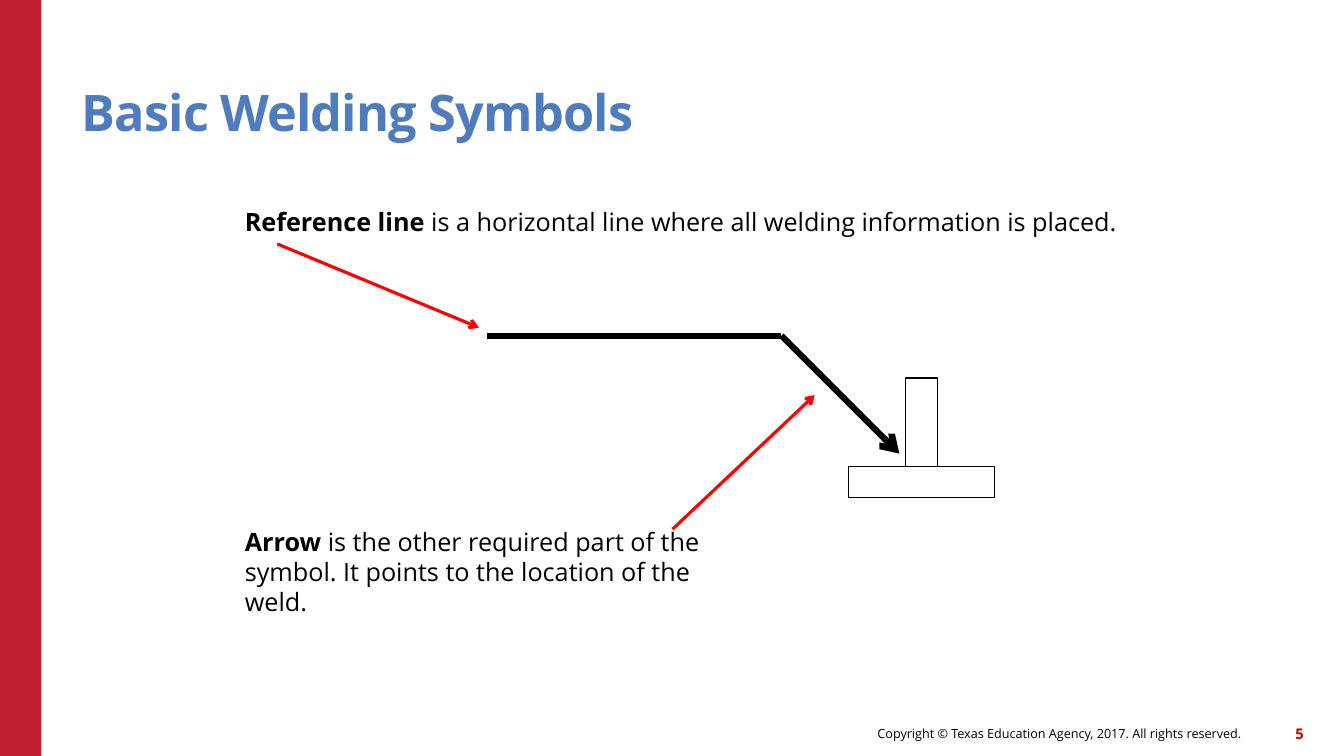
from dataclasses import dataclass

from lxml.etree import SubElement
from pptx import Presentation
from pptx.dml.color import RGBColor
from pptx.enum.shapes import MSO_CONNECTOR, MSO_SHAPE
from pptx.enum.text import MSO_ANCHOR, PP_ALIGN
from pptx.oxml.ns import qn
from pptx.util import Inches, Pt


@dataclass(frozen=True)
class Theme:
    font: str = "Open Sans"
    band: str = "C02033"
    title: str = "4E7CBE"
    ink: str = "000000"
    number: str = "C00000"
    pointer: str = "FF0000"
    title_size: float = 36
    body_size: float = 18
    number_size: float = 10.5
    copyright_size: float = 9
    symbol_line: float = 4.5
    pointer_line: float = 2.25
    plate_line: float = 0.75


THEME = Theme()


def add_span(para, text, size, color, bold=False):
    span = para.add_run()
    span.text = text
    span.font.name = THEME.font
    span.font.size = Pt(size)
    span.font.bold = bold
    span.font.color.rgb = RGBColor.from_string(color)
    return span


def set_frame(frame, anchor, margin_x=0, margin_y=0):
    frame.word_wrap = True
    frame.vertical_anchor = anchor
    frame.margin_left = frame.margin_right = Inches(margin_x)
    frame.margin_top = frame.margin_bottom = Inches(margin_y)


def add_rectangle(page, left, top, width, height):
    rectangle = page.shapes.add_shape(
        MSO_SHAPE.RECTANGLE, Inches(left), Inches(top), Inches(width), Inches(height))
    rectangle.shadow.inherit = False
    return rectangle


def add_line(page, start, end, color, width, arrow=False):
    line = page.shapes.add_connector(
        MSO_CONNECTOR.STRAIGHT, *(Inches(length) for length in (*start, *end)))
    line.line.color.rgb = RGBColor.from_string(color)
    line.line.width = Pt(width)
    if arrow:
        SubElement(line.line._get_or_add_ln(), qn("a:tailEnd"), type="arrow")
    SubElement(line._element.spPr, qn("a:effectLst"))


def add_band(page, left, top, width, height):
    band = add_rectangle(page, left, top, width, height)
    band.fill.solid()
    band.fill.fore_color.rgb = RGBColor.from_string(THEME.band)
    band.line.fill.background()


def add_title(page, left, top, width, height):
    title = page.shapes.title
    title.left, title.top = Inches(left), Inches(top)
    title.width, title.height = Inches(width), Inches(height)
    set_frame(title.text_frame, MSO_ANCHOR.BOTTOM)
    para = title.text_frame.paragraphs[0]
    para.alignment = PP_ALIGN.LEFT
    para.line_spacing = 0.9
    span = add_span(para, "Basic Welding Symbols", THEME.title_size, THEME.title, True)
    span._r.get_or_add_rPr().set("spc", "-60")


def add_footer(page, left, top, width, height):
    number_width = 0.42
    parts = (
        (left, width - number_width - 0.2, THEME.copyright_size, THEME.ink, False,
         "Copyright © Texas Education Agency, 2017. All rights reserved."),
        (left + width - number_width, number_width, THEME.number_size, THEME.number, True, "5"),
    )
    for part_left, part_width, size, color, bold, text in parts:
        box = page.shapes.add_textbox(
            Inches(part_left), Inches(top), Inches(part_width), Inches(height))
        set_frame(box.text_frame, MSO_ANCHOR.MIDDLE)
        para = box.text_frame.paragraphs[0]
        para.alignment = PP_ALIGN.RIGHT
        add_span(para, text, size, color, bold)


def add_definition(page, left, top, width, height, term, meaning, pointer_start, pointer_end):
    box = page.shapes.add_textbox(Inches(left), Inches(top), Inches(width), Inches(height))
    set_frame(box.text_frame, MSO_ANCHOR.TOP, 0.1, 0.05)
    para = box.text_frame.paragraphs[0]
    add_span(para, term, THEME.body_size, THEME.ink, True)
    add_span(para, meaning, THEME.body_size, THEME.ink)
    start, end = ((left + x, top + y) for x, y in (pointer_start, pointer_end))
    add_line(page, start, end, THEME.pointer, THEME.pointer_line, True)


def add_welding_symbol(page, left, top, reference_length, arrow_reach):
    bend = (left + reference_length, top)
    tip = (bend[0] + arrow_reach, top + arrow_reach)
    add_line(page, (left, top), bend, THEME.ink, THEME.symbol_line)
    add_line(page, bend, tip, THEME.ink, THEME.symbol_line, True)


def add_tee_joint(page, left, top, width, height):
    thickness = 0.31
    base_top = top + height - thickness
    plates = (
        (left, base_top, width, thickness),
        (left + (width - thickness) / 2, top, thickness, height - thickness),
    )
    for plate_box in plates:
        plate = add_rectangle(page, *plate_box)
        plate.fill.background()
        plate.line.color.rgb = RGBColor.from_string(THEME.ink)
        plate.line.width = Pt(THEME.plate_line)


def main():
    deck = Presentation()
    deck.slide_width, deck.slide_height = Inches(13.33), Inches(7.5)
    page = deck.slides.add_slide(deck.slide_layouts[5])
    add_band(page, 0, 0, 0.41, 7.5)
    add_footer(page, 6.14, 7.12, 6.79, 0.32)
    add_title(page, 0.81, 0.45, 11, 0.96)
    add_welding_symbol(page, 4.83, 3.33, 2.92, 1.17)
    add_definition(page, 2.33, 2, 8.92, 0.4, "Reference line ",
                   "is a horizontal line where all welding information is placed.",
                   (0.42, 0.42), (2.42, 1.25))
    add_definition(page, 2.33, 5.17, 5.17, 0.71, "Arrow",
                   " is the other required part of the symbol. "
                   "It points to the location of the weld.",
                   (4.34, 0.08), (5.75, -1.25))
    add_tee_joint(page, 8.42, 3.75, 1.44, 1.19)
    deck.save("out.pptx")


if __name__ == "__main__":
    main()
